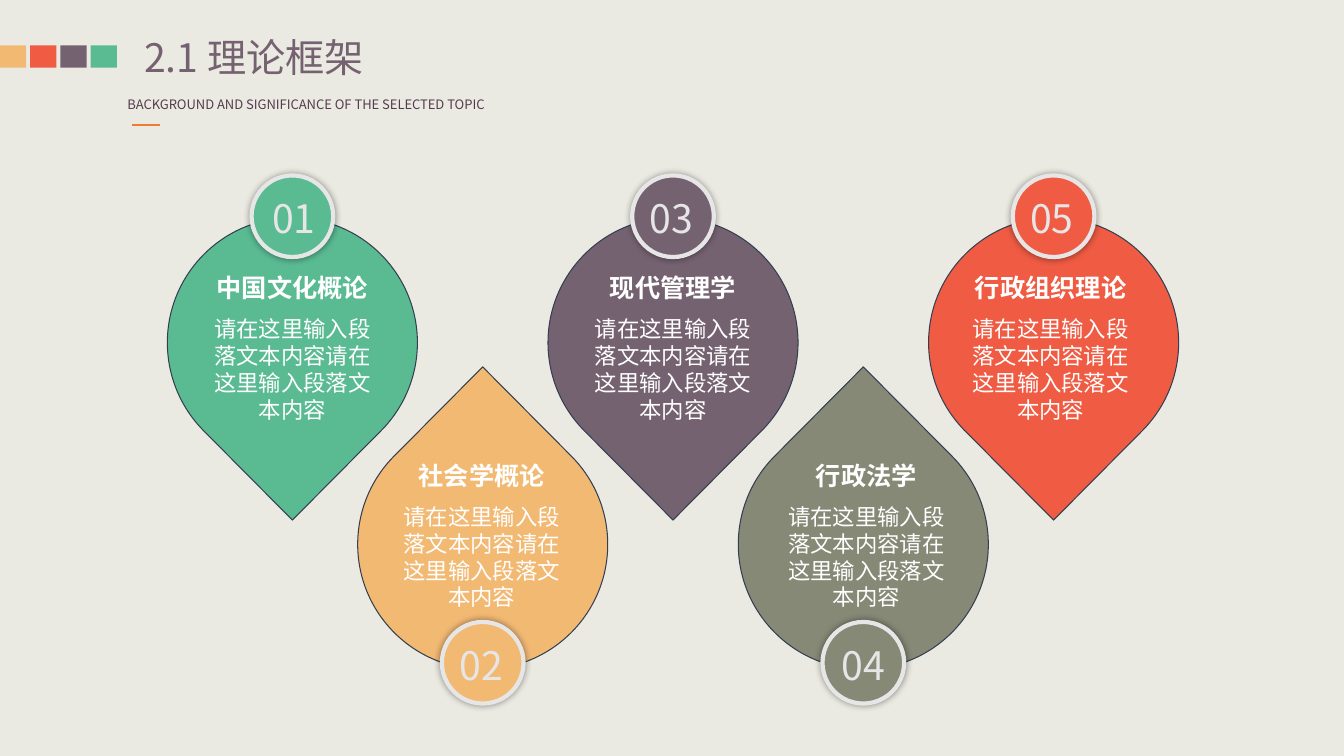
from dataclasses import dataclass
from itertools import pairwise
from math import cos, radians, sin, tan

from lxml.etree import SubElement
from pptx import Presentation
from pptx.dml.color import RGBColor
from pptx.enum.shapes import MSO_CONNECTOR, MSO_SHAPE
from pptx.enum.text import MSO_ANCHOR, MSO_AUTO_SIZE, PP_ALIGN
from pptx.oxml.ns import qn
from pptx.shapes.autoshape import Shape
from pptx.shapes.shapetree import GroupShapes
from pptx.slide import Slide
from pptx.util import Inches, Pt

GREEN = RGBColor(0x5A, 0xBB, 0x93)
AMBER = RGBColor(0xF2, 0xB9, 0x73)
PURPLE = RGBColor(0x75, 0x62, 0x71)
OLIVE = RGBColor(0x85, 0x89, 0x76)
RED = RGBColor(0xEF, 0x5B, 0x43)
ORANGE = RGBColor(0xED, 0x7D, 0x31)
PLUM = RGBColor(0x54, 0x3C, 0x4F)
NAVY = RGBColor(0x33, 0x3F, 0x50)
PALE_GRAY = RGBColor(0xE7, 0xE6, 0xE6)
WHITE = RGBColor(0xFF, 0xFF, 0xFF)
BACKGROUND = RGBColor(0xEB, 0xEA, 0xE2)

FONT = "Noto Sans CJK SC"
BODY_TEXT = "请在这里输入段落文本内容请在这里输入段落文本内容"

# Grid of drops, in inches
FIRST_COLUMN = 2.9
LAST_COLUMN = 10.45
RADIUS = 1.24
TIP_DISTANCE = 1.76
ARC_ANGLES = (-135, -90, 0, 90, 135)
BADGE_SIZE = 0.81


@dataclass(frozen=True)
class Row:
    """Vertical places shared by the drops that point the same way."""
    direction: int
    center: float
    badge_center: float
    number_top: float
    heading_top: float
    body_top: float


@dataclass(frozen=True)
class Drop:
    heading: str
    color: RGBColor
    text_shift: float = 0
    number_shift: float = 0


UPPER_ROW = Row(1, 3.4, 2.145, 1.88, 2.65, 3.08)
LOWER_ROW = Row(-1, 5.4, 6.575, 6.31, 4.52, 4.94)
DROPS = (
    Drop("中国文化概论", GREEN, number_shift=0.03),
    Drop("社会学概论", AMBER, text_shift=-0.01),
    Drop("现代管理学", PURPLE),
    Drop("行政法学", OLIVE, text_shift=0.03, number_shift=0.02),
    Drop("行政组织理论", RED, text_shift=-0.03),
)
COLUMN_STEP = (LAST_COLUMN - FIRST_COLUMN) / (len(DROPS) - 1)
SQUARES = (AMBER, RED, PURPLE, GREEN)


def write_text(shape: Shape, text: str, *, size: float, color: RGBColor,
               bold: bool = False, wrap: bool = True,
               align: PP_ALIGN = PP_ALIGN.LEFT) -> None:
    frame = shape.text_frame
    frame.word_wrap = wrap
    frame.auto_size = MSO_AUTO_SIZE.SHAPE_TO_FIT_TEXT
    paragraph = frame.paragraphs[0]
    paragraph.alignment = align
    run = paragraph.add_run()
    run.text = text
    run.font.name = FONT
    run.font.size = Pt(size)
    run.font.bold = bold
    run.font.color.rgb = color
    run.font._element.set("kern", "0")
    SubElement(run.font._element, qn("a:ea"), typeface=FONT)


def add_text(shapes: GroupShapes, center: float, top: float, width: float,
             height: float, text: str, **text_format) -> None:
    box = shapes.add_textbox(Inches(center - width / 2), Inches(top),
                             Inches(width), Inches(height))
    write_text(box, text, **text_format)


def paint(shape: Shape, fill: RGBColor, line: RGBColor | None = None,
          line_width: float = 0) -> None:
    shape.shadow.inherit = False
    shape.fill.solid()
    shape.fill.fore_color.rgb = fill
    if line is None:
        shape.line.fill.background()
    else:
        shape.line.color.rgb = line
        shape.line.width = Pt(line_width)


def add_soft_shadow(shape: Shape) -> None:
    effects = shape._element.spPr.find(qn("a:effectLst"))
    shadow = SubElement(effects, qn("a:outerShdw"), blurRad=str(Pt(5)),
                        dist="0", dir="0", algn="ctr", rotWithShape="0")
    black = SubElement(shadow, qn("a:srgbClr"), val="000000")
    SubElement(black, qn("a:alpha"), val="40000")


def add_drop_outline(shapes: GroupShapes, center: float, row: Row) -> Shape:
    """Three quarters of a circle, closed by two tangents that meet in a tip."""

    def arc_point(angle: float, handle: float = 0) -> tuple[int, int]:
        """Point on the circle, moved along its tangent by a share of the radius."""
        turn = radians(angle)
        across = sin(turn) + handle * cos(turn)
        along = cos(turn) - handle * sin(turn)
        return (Inches(center + RADIUS * across),
                Inches(row.center - row.direction * RADIUS * along))

    tip_y = row.center + row.direction * TIP_DISTANCE
    builder = shapes.build_freeform(Inches(center), Inches(tip_y))
    builder.add_line_segments([arc_point(angle) for angle in ARC_ANGLES])
    outline = builder.convert_to_shape()

    # Bend the segments between arc points into cubic curves
    segments = list(outline._element.iter(qn("a:lnTo")))[1:len(ARC_ANGLES)]
    for segment, (start, end) in zip(segments, pairwise(ARC_ANGLES)):
        handle = 4 / 3 * tan(radians(end - start) / 4)
        segment.tag = qn("a:cubicBezTo")
        controls = (arc_point(start, handle), arc_point(end, -handle))
        for index, (x, y) in enumerate(controls):
            point = SubElement(segment, qn("a:pt"), x=str(x - outline.left),
                               y=str(y - outline.top))
            segment.insert(index, point)
    return outline


def add_drop(slide: Slide, index: int, drop: Drop) -> None:
    row = LOWER_ROW if index % 2 else UPPER_ROW
    center = FIRST_COLUMN + index * COLUMN_STEP
    shapes = slide.shapes.add_group_shape().shapes
    paint(add_drop_outline(shapes, center, row), drop.color, NAVY, 0.75)

    badge = shapes.add_shape(
        MSO_SHAPE.OVAL, Inches(center - BADGE_SIZE / 2),
        Inches(row.badge_center - BADGE_SIZE / 2),
        Inches(BADGE_SIZE), Inches(BADGE_SIZE))
    paint(badge, drop.color, PALE_GRAY, 3)
    add_soft_shadow(badge)

    text_center = center + drop.text_shift
    add_text(shapes, text_center, row.heading_top, 1.91, 0.4, drop.heading,
             size=18, color=WHITE, bold=True, align=PP_ALIGN.CENTER)
    add_text(shapes, text_center, row.body_top, 1.9, 1.18, BODY_TEXT,
             size=16, color=WHITE, align=PP_ALIGN.CENTER)
    add_text(shapes, center + drop.number_shift, row.number_top, 0.66, 0.57,
             f"{index + 1:02}", size=28, color=PALE_GRAY, wrap=False)


def add_header(slide: Slide) -> None:
    squares = slide.shapes.add_group_shape().shapes
    for index, color in enumerate(SQUARES):
        square = squares.add_shape(MSO_SHAPE.RECTANGLE, Inches(index * 0.3),
                                   Inches(0.45), Inches(0.26), Inches(0.22))
        paint(square, color)

    title = slide.shapes.title
    title.left, title.top = Inches(1.43), Inches(0.33)
    title.width, title.height = Inches(3.99), Inches(0.47)
    frame = title.text_frame
    frame.margin_left = frame.margin_right = 0
    frame.margin_top = frame.margin_bottom = 0
    frame.vertical_anchor = MSO_ANCHOR.MIDDLE
    write_text(title, "2.1 理论框架", size=28, color=PURPLE)

    add_text(slide.shapes, 3.2, 0.91, 4.07, 0.26,
             "BACKGROUND AND SIGNIFICANCE OF THE SELECTED TOPIC",
             size=9.3, color=PLUM, wrap=False)
    rule = slide.shapes.add_connector(MSO_CONNECTOR.STRAIGHT, Inches(1.31),
                                      Inches(1.24), Inches(1.59), Inches(1.24))
    rule.line.color.rgb = ORANGE
    rule.line.width = Pt(1.5)
    SubElement(rule._element.spPr, qn("a:effectLst"))


def main() -> None:
    presentation = Presentation()
    presentation.slide_width = Inches(13.33)
    presentation.slide_height = Inches(7.5)
    slide = presentation.slides.add_slide(presentation.slide_layouts[5])
    slide.background.fill.solid()
    slide.background.fill.fore_color.rgb = BACKGROUND
    add_header(slide)
    for index, drop in enumerate(DROPS):
        add_drop(slide, index, drop)
    presentation.save("out.pptx")


if __name__ == "__main__":
    main()
